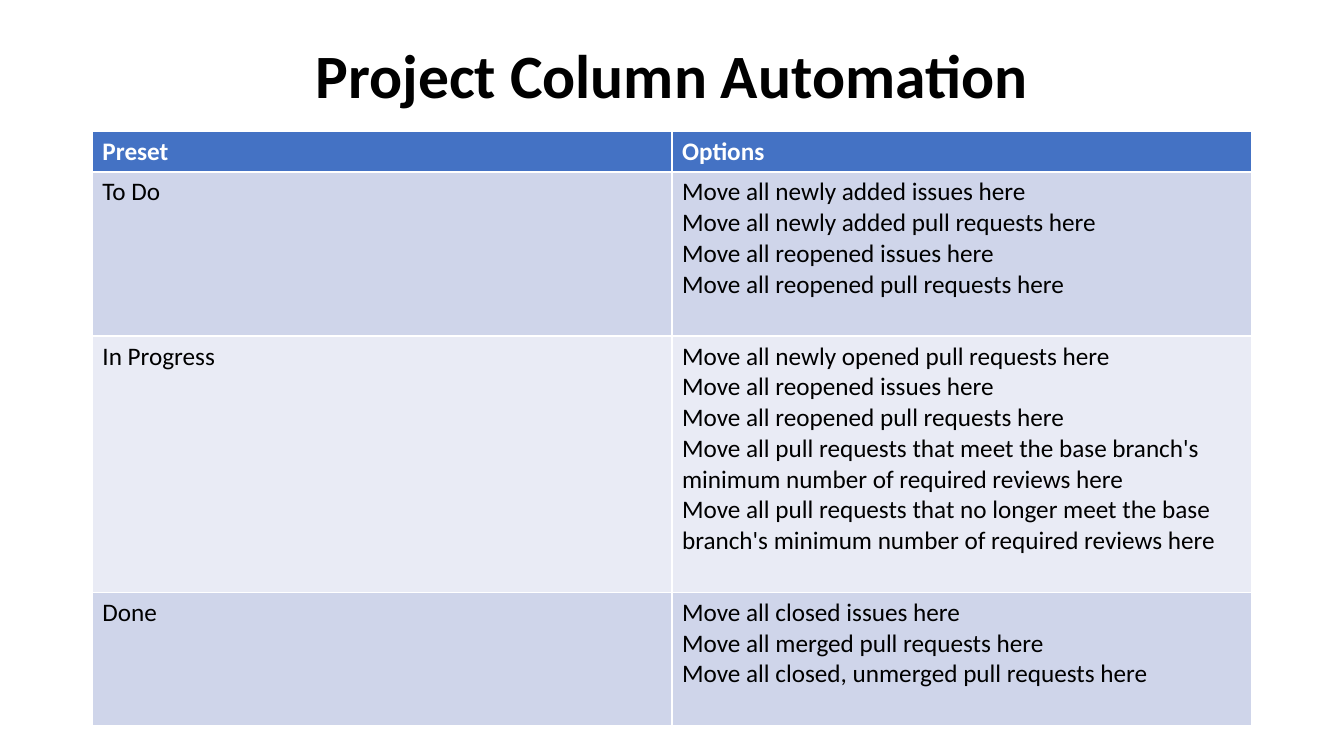
"""Build the project column automation slide."""
from pptx import Presentation
from pptx.dml.color import RGBColor
from pptx.enum.text import MSO_ANCHOR, PP_ALIGN
from pptx.util import Pt

TITLE = "Project Column Automation"
HEAD = ("Preset", ["Options"], 1)
ROWS = [
    HEAD,
    ("To Do", [
        "Move all newly added issues here",
        "Move all newly added pull requests here",
        "Move all reopened issues here",
        "Move all reopened pull requests here",
    ], 5),
    ("In Progress", [
        "Move all newly opened pull requests here",
        "Move all reopened issues here",
        "Move all reopened pull requests here",
        "Move all pull requests that meet the base branch's minimum number of required reviews here",
        "Move all pull requests that no longer meet the base branch's minimum number of required reviews here",
    ], 8),
    ("Done", [
        "Move all closed issues here",
        "Move all merged pull requests here",
        "Move all closed, unmerged pull requests here",
    ], 4),
]

BLACK = RGBColor(0x00, 0x00, 0x00)
WHITE = RGBColor(0xFF, 0xFF, 0xFF)
BLUE = RGBColor(0x44, 0x72, 0xC4)
BANDS = [RGBColor(0xE9, 0xEB, 0xF5), RGBColor(0xCF, 0xD5, 0xEA)]

LEFT, WIDTH = 66, 828
TOP = 93.6
LINE, PAD = 22, 7.2


def write(frame, lines, size=18, color=BLACK, bold=False, align=PP_ALIGN.LEFT, space=1.0):
    """Fill a text frame with one paragraph per line."""
    for i, line in enumerate(lines):
        para = frame.paragraphs[0] if i == 0 else frame.add_paragraph()
        para.alignment = align
        para.line_spacing = space
        run = para.add_run()
        run.text = line
        run.font.name = "Calibri"
        run.font.size = Pt(size)
        run.font.bold = bold
        run.font.color.rgb = color


def main():
    """Make the slide and save it."""
    deck = Presentation()
    deck.slide_width, deck.slide_height = Pt(960), Pt(540)
    slide = deck.slides.add_slide(deck.slide_layouts[5])

    title = slide.shapes.title
    title.left, title.top = Pt(LEFT), Pt(28.8)
    title.width, title.height = Pt(WIDTH), Pt(104.4)
    title.text_frame.vertical_anchor = MSO_ANCHOR.TOP
    write(title.text_frame, [TITLE], size=44, bold=True, align=PP_ALIGN.CENTER, space=0.9)

    highs = [LINE * count + PAD for _, _, count in ROWS]
    grid = slide.shapes.add_table(
        len(ROWS), 2, Pt(LEFT), Pt(TOP), Pt(WIDTH), Pt(sum(highs))).table
    for r, (preset, options, _) in enumerate(ROWS):
        grid.rows[r].height = Pt(highs[r])
        top = r == 0
        for c, lines in enumerate(([preset], options)):
            cell = grid.cell(r, c)
            cell.fill.solid()
            cell.fill.fore_color.rgb = BLUE if top else BANDS[r % 2]
            write(cell.text_frame, lines, color=WHITE if top else BLACK, bold=top)

    deck.save("out.pptx")


if __name__ == "__main__":
    main()
